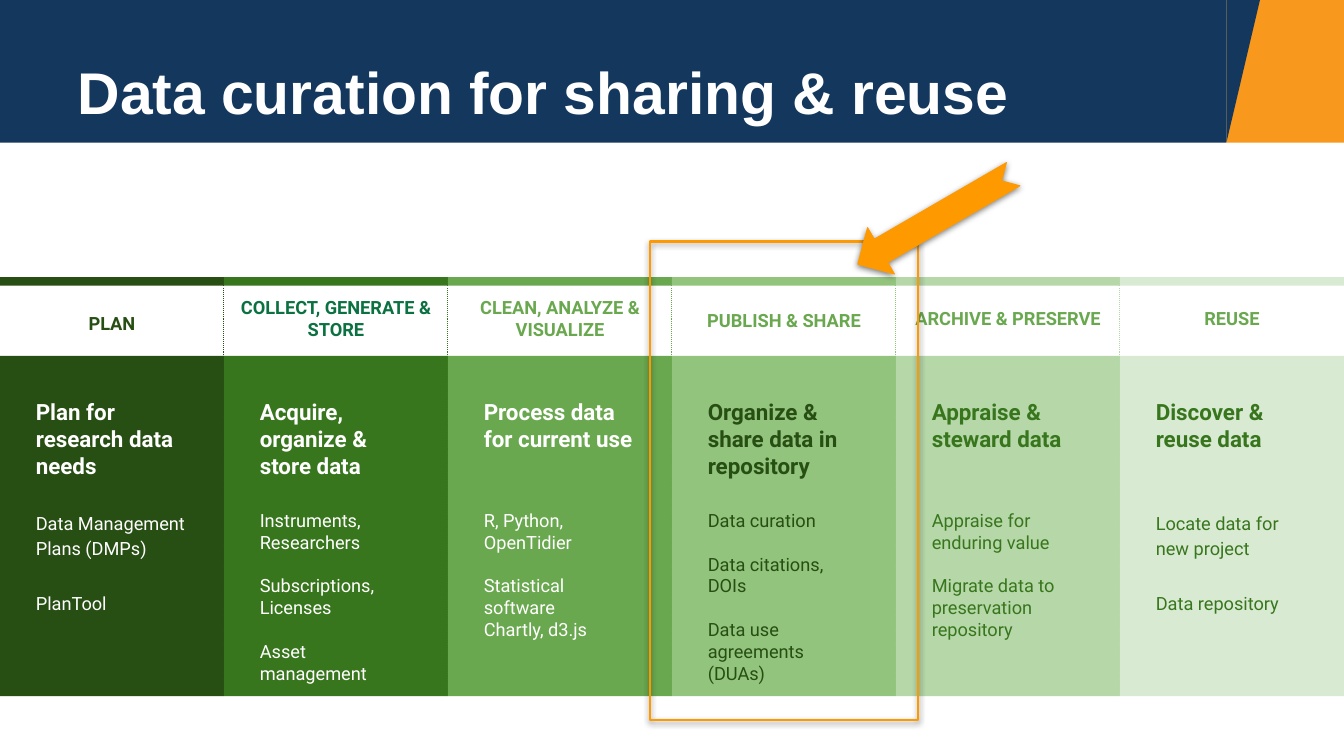
from dataclasses import dataclass

from lxml.etree import SubElement
from pptx import Presentation
from pptx.dml.color import RGBColor
from pptx.enum.dml import MSO_LINE
from pptx.enum.shapes import MSO_CONNECTOR, MSO_SHAPE
from pptx.enum.text import MSO_ANCHOR, PP_ALIGN
from pptx.oxml.ns import qn
from pptx.shapes.autoshape import Shape
from pptx.slide import Slide
from pptx.util import Pt

NAVY, ORANGE, HIGHLIGHT, WHITE = "14375D", "F8981D", "FF9900", "FFFFFF"
DARK, FOREST, LEAF = "274E13", "38761D", "6AA84F"
COLUMN_WIDTH = 160
BAR_TOP, PANEL_TOP, DIVIDER_END = 198, 254.2, 496
TEXT_INDENT, TEXT_WIDTH = 18.5, 123


@dataclass(frozen=True)
class Stage:
    label: str
    label_color: str
    fill: str
    text_color: str
    goal: str
    topics: tuple[str, ...]
    spacing: float = 1.0
    gap: float = 15.7
    label_spacing: float = 1.0
    label_anchor: MSO_ANCHOR = MSO_ANCHOR.MIDDLE


STAGES = (
    Stage("PLAN", DARK, DARK, WHITE, "Plan for research data needs",
          ("Data Management Plans (DMPs)", "PlanTool"),
          spacing=1.15, gap=21.3, label_spacing=1.15, label_anchor=MSO_ANCHOR.TOP),
    Stage("COLLECT, GENERATE & STORE", "0B7140", FOREST, WHITE,
          "Acquire, organize & store data",
          ("Instruments, Researchers", "Subscriptions, Licenses", "Asset management")),
    Stage("CLEAN, ANALYZE & VISUALIZE", LEAF, LEAF, WHITE,
          "Process data for current use",
          ("R, Python, OpenTidier", "Statistical software\nChartly, d3.js")),
    Stage("PUBLISH & SHARE", LEAF, "93C47D", DARK,
          "Organize & share data in repository",
          ("Data curation", "Data citations, DOIs", "Data use agreements (DUAs)"),
          label_spacing=1.15),
    Stage("ARCHIVE & PRESERVE", LEAF, "B6D7A8", FOREST, "Appraise & steward data",
          ("Appraise for enduring value", "Migrate data to preservation repository")),
    Stage("REUSE", LEAF, "D9EAD3", FOREST, "Discover & reuse data",
          ("Locate data for new project", "Data repository"), spacing=1.15, gap=21.3),
)


def color(hex_value: str) -> RGBColor:
    return RGBColor.from_string(hex_value)


def write(shape: Shape, *groups: str, size: float, ink: str, font: str = "Roboto",
          bold: bool = False, align: PP_ALIGN = PP_ALIGN.LEFT,
          anchor: MSO_ANCHOR = MSO_ANCHOR.TOP, spacing: float = 1.0,
          gap: float = 0, inset: float = 7.2, inset_y: float = 7.2) -> None:
    frame = shape.text_frame
    frame.word_wrap = True
    frame.vertical_anchor = anchor
    frame.margin_left = frame.margin_right = Pt(inset)
    frame.margin_top = frame.margin_bottom = Pt(inset_y)
    lines = [(line, gap if group_index and not line_index else 0)
             for group_index, group in enumerate(groups)
             for line_index, line in enumerate(group.split("\n"))]
    for index, (line, before) in enumerate(lines):
        paragraph = frame.add_paragraph() if index else frame.paragraphs[0]
        paragraph.alignment = align
        paragraph.line_spacing = spacing
        paragraph.space_before = Pt(before)
        run = paragraph.add_run()
        run.text = line
        run.font.name = font
        run.font.size = Pt(size)
        run.font.bold = bold
        run.font.color.rgb = color(ink)


def add_text(slide: Slide, left: float, top: float, width: float, height: float,
             *groups: str, **style) -> None:
    box = slide.shapes.add_textbox(Pt(left), Pt(top), Pt(width), Pt(height))
    write(box, *groups, **style)


def add_block(slide: Slide, left: float, top: float, width: float, height: float,
              fill: str | None = None, outline: str | None = None,
              weight: float = 0.75, kind: MSO_SHAPE = MSO_SHAPE.RECTANGLE) -> Shape:
    block = slide.shapes.add_shape(kind, Pt(left), Pt(top), Pt(width), Pt(height))
    block.shadow.inherit = False
    if fill:
        block.fill.solid()
        block.fill.fore_color.rgb = color(fill)
    else:
        block.fill.background()
    if outline:
        block.line.color.rgb = color(outline)
        block.line.width = Pt(weight)
    else:
        block.line.fill.background()
    return block


def cast_shadow(shape: Shape) -> None:
    effects = shape._element.spPr.find(qn("a:effectLst"))
    shadow = SubElement(effects, qn("a:outerShdw"), blurRad=str(Pt(4.5)),
                        dist=str(Pt(1.5)), dir="5400000", algn="bl", rotWithShape="0")
    shade = SubElement(shadow, qn("a:srgbClr"), val="000000")
    SubElement(shade, qn("a:alpha"), val="50000")


def add_header(slide: Slide) -> None:
    add_block(slide, 0, 0, 876, 102, NAVY)
    add_block(slide, 876, 0, 84, 102, ORANGE)
    wedge = add_block(slide, 876, 0, 24, 102, NAVY, kind=MSO_SHAPE.ISOSCELES_TRIANGLE)
    wedge.adjustments[0] = 0
    wedge._element.spPr.find(qn("a:xfrm")).set("flipV", "1")
    title = slide.shapes.title
    title.left, title.top, title.width, title.height = Pt(48.2), Pt(25.9), Pt(872), Pt(84.2)
    write(title, "Data curation for sharing & reuse", size=42, ink=WHITE, font="Arial",
          bold=True, anchor=MSO_ANCHOR.MIDDLE, spacing=0.9, inset_y=3.6)
    slide.shapes._spTree.append(title._element)


def add_stage(slide: Slide, stage: Stage, left: float) -> None:
    add_block(slide, left, PANEL_TOP, COLUMN_WIDTH, 243, stage.fill)
    add_block(slide, left, BAR_TOP, COLUMN_WIDTH, 6, stage.fill)
    add_text(slide, left, 213.8, COLUMN_WIDTH, 27.4, stage.label, size=13,
             ink=stage.label_color, bold=True, align=PP_ALIGN.CENTER,
             anchor=stage.label_anchor, spacing=stage.label_spacing)
    add_text(slide, left + TEXT_INDENT, 277.2, TEXT_WIDTH, 71.3, stage.goal,
             size=16, ink=stage.text_color, bold=True)
    add_text(slide, left + TEXT_INDENT, 356.4, TEXT_WIDTH, 115.2, *stage.topics,
             size=13, ink=stage.text_color, spacing=stage.spacing, gap=stage.gap)


def add_divider(slide: Slide, stage: Stage, x: float) -> None:
    divider = slide.shapes.add_connector(
        MSO_CONNECTOR.STRAIGHT, Pt(x), Pt(BAR_TOP), Pt(x), Pt(DIVIDER_END))
    divider.line.color.rgb = color(stage.fill)
    divider.line.width = Pt(0.75)
    divider.line.dash_style = MSO_LINE.ROUND_DOT
    SubElement(divider._element.spPr, qn("a:effectLst"))


def add_emphasis(slide: Slide) -> None:
    frame = add_block(slide, 464.4, 172.5, 191.5, 342, outline=HIGHLIGHT, weight=1.5)
    arrow = add_block(slide, 604.1, 137.5, 128.2, 38.2, HIGHLIGHT, HIGHLIGHT,
                      kind=MSO_SHAPE.NOTCHED_RIGHT_ARROW)
    arrow.rotation = 149.9
    for mark in (frame, arrow):
        cast_shadow(mark)


def main() -> None:
    deck = Presentation()
    deck.slide_width, deck.slide_height = Pt(960), Pt(540)
    slide = deck.slides.add_slide(deck.slide_layouts[5])
    add_header(slide)
    for index, stage in enumerate(STAGES):
        add_stage(slide, stage, index * COLUMN_WIDTH)
    for index, stage in enumerate(STAGES[:-1], start=1):
        add_divider(slide, stage, index * COLUMN_WIDTH)
    add_emphasis(slide)
    deck.save("out.pptx")


if __name__ == "__main__":
    main()
